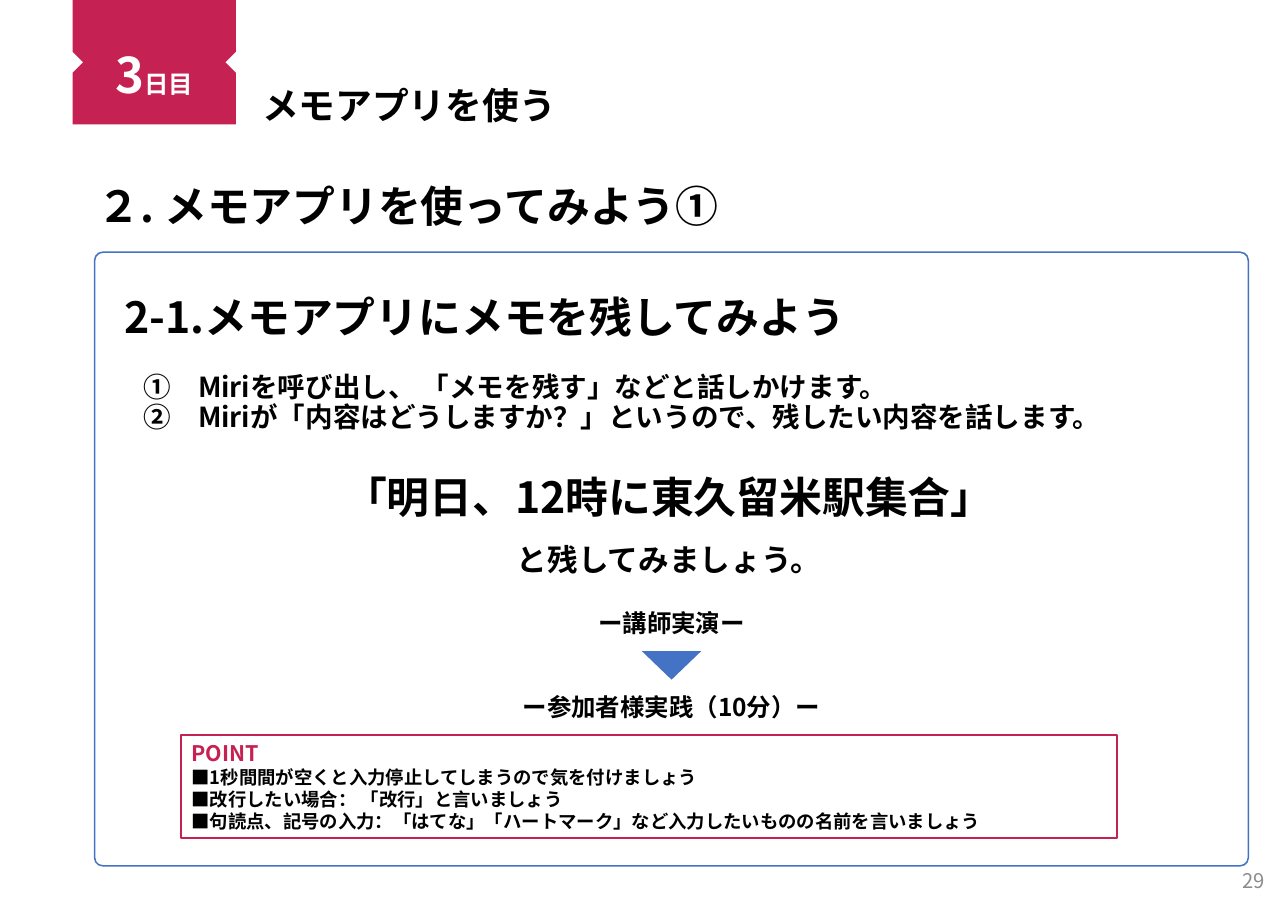
from lxml import etree
from pptx import Presentation
from pptx.dml.color import RGBColor
from pptx.enum import shapes, text
from pptx.oxml.ns import qn
from pptx.util import Inches, Pt

FONT = "Noto Sans CJK JP"
BLACK = RGBColor(0x00, 0x00, 0x00)
WHITE = RGBColor(0xFF, 0xFF, 0xFF)
BLUE = RGBColor(0x44, 0x72, 0xC4)
CRIMSON = RGBColor(0xC6, 0x21, 0x53)
GREY = RGBColor(0x8C, 0x8C, 0x8C)
CENTER, RIGHT = text.PP_ALIGN.CENTER, text.PP_ALIGN.RIGHT
JUSTIFY = text.PP_ALIGN.JUSTIFY
MIDDLE, TOP = text.MSO_ANCHOR.MIDDLE, text.MSO_ANCHOR.TOP


def add_shape(page, kind, left, top, width, height, fill=None, line=None, weight=1):
    shape = page.shapes.add_shape(
        kind, Inches(left), Inches(top), Inches(width), Inches(height))
    shape.shadow.inherit = False
    if fill is None:
        shape.fill.background()
    else:
        shape.fill.solid()
        shape.fill.fore_color.rgb = fill
    if line is None:
        shape.line.fill.background()
    else:
        shape.line.color.rgb = line
        shape.line.width = Pt(weight)
    return shape


def style(paragraph, size, color=BLACK, bold=True, align=text.PP_ALIGN.LEFT):
    paragraph.alignment = align
    font = paragraph.font
    font.size, font.bold, font.name = Pt(size), bold, FONT
    font.color.rgb = color
    # East Asian typeface follows the Latin one
    latin = paragraph._p.pPr.find(qn("a:defRPr")).find(qn("a:latin"))
    east_asian = etree.Element(qn("a:ea"), typeface=FONT)
    latin.addnext(east_asian)


def fill_text(box, lines, anchor=TOP, **options):
    """Write (wording, size) lines into a box and return its paragraphs."""
    frame = box.text_frame
    frame.word_wrap = True
    frame.vertical_anchor = anchor
    for index, (wording, size) in enumerate(lines):
        paragraph = frame.add_paragraph() if index else frame.paragraphs[0]
        paragraph.add_run().text = wording
        style(paragraph, size, **options)
    return frame.paragraphs


def add_text(page, left, top, width, height, lines, **options):
    box = page.shapes.add_textbox(
        Inches(left), Inches(top), Inches(width), Inches(height))
    return fill_text(box, lines, **options)


def add_day_badge(page, left, top, width, height):
    # Two snipped halves meet at the notches
    half = height / 2
    for index, rotation in enumerate((180, 0)):
        piece = add_shape(page, shapes.MSO_SHAPE.SNIP_2_SAME_RECTANGLE,
                          left, top + index * half, width, half, CRIMSON)
        piece.rotation = rotation
    label = add_shape(page, shapes.MSO_SHAPE.RECTANGLE,
                      left + 0.2, top + 0.36, width - 0.4, 0.64, CRIMSON)
    paragraph = fill_text(label, [("3", 32)], color=WHITE, align=CENTER)[0]
    span = paragraph.add_run()
    span.text = "日目"
    span.font.size = Pt(16)


def add_header(page, left, top):
    add_day_badge(page, left, top, 1.48, 1.13)
    add_text(page, left + 1.62, top + 0.7, 5.85, 0.5, [("メモアプリを使う", 24)])
    add_text(page, left + 0.13, top + 1.58, 9.11, 0.57,
             [("２. メモアプリを使ってみよう①", 28)])


def add_steps(page, left, top, width, height):
    steps = add_text(page, left, top, width, height, [
        ("①　Miriを呼び出し、 「メモを残す」などと話しかけます。", 18),
        ("②　Miriが「内容はどうしますか？」というので、残したい内容を話します。", 18),
    ], align=JUSTIFY)
    for paragraph in steps:
        paragraph.line_spacing = Pt(20)
        paragraph._p.pPr.set("marL", str(Inches(0.78)))
        paragraph._p.pPr.set("indent", str(Inches(-0.17)))


def add_practice(page, left, top, width):
    # Demonstration, arrow, then practice
    for offset, wording in ((0, "ー講師実演ー"), (0.77, "ー参加者様実践（10分）ー")):
        add_text(page, left, top + offset, width, 0.26, [(wording, 16)],
                 anchor=MIDDLE, align=CENTER)
    arrow = add_shape(page, shapes.MSO_SHAPE.ISOSCELES_TRIANGLE,
                      left + width / 2 - 0.27, top + 0.39, 0.54, 0.26, BLUE)
    arrow.rotation = 180


def add_point_box(page, left, top, width, height):
    box = add_shape(page, shapes.MSO_SHAPE.RECTANGLE, left, top, width, height,
                    line=CRIMSON, weight=1.5)
    heading = fill_text(box, [
        ("POINT", 14),
        ("■1秒間間が空くと入力停止してしまうので気を付けましょう", 12),
        ("■改行したい場合： 「改行」と言いましょう", 12),
        ("■句読点、記号の入力：「はてな」「ハートマーク」など入力したいものの名前を言いましょう", 12),
    ])[0]
    heading.font.color.rgb = CRIMSON


def add_exercise(page, left, top, width, height):
    panel = add_shape(page, shapes.MSO_SHAPE.ROUNDED_RECTANGLE,
                      left, top, width, height, WHITE, BLUE)
    panel.adjustments[0] = 0.013
    add_text(page, left + 0.17, top + 0.3, 9.11, 0.57,
             [("2-1.メモアプリにメモを残してみよう", 28)])
    add_steps(page, left - 0.27, top + 1.04, width, 0.67)
    # Sample memo
    sample = add_text(page, left + 0.45, top + 1.7, 9.52, 1.27, [
        ("「明日、12時に東久留米駅集合」", 28),
        ("と残してみましょう。", 20),
    ], align=CENTER)
    for paragraph in sample:
        paragraph.line_spacing = 1.5
    add_practice(page, left + 0.74, top + 3.23, 8.99)
    add_point_box(page, left + 0.78, top + 4.38, 8.5, 0.94)


def add_page_number(page, left, top, width, height):
    add_text(page, left, top, width, height, [("29", 13.2)],
             anchor=MIDDLE, color=GREY, bold=False, align=RIGHT)


def main():
    deck = Presentation()
    deck.slide_width, deck.slide_height = Inches(11.69), Inches(8.27)
    page = deck.slides.add_slide(deck.slide_layouts[6])
    add_exercise(page, 0.86, 2.29, 10.47, 5.57)
    add_header(page, 0.66, 0)
    add_page_number(page, 8.58, 7.79, 3, 0.4)
    deck.save("out.pptx")


if __name__ == "__main__":
    main()
